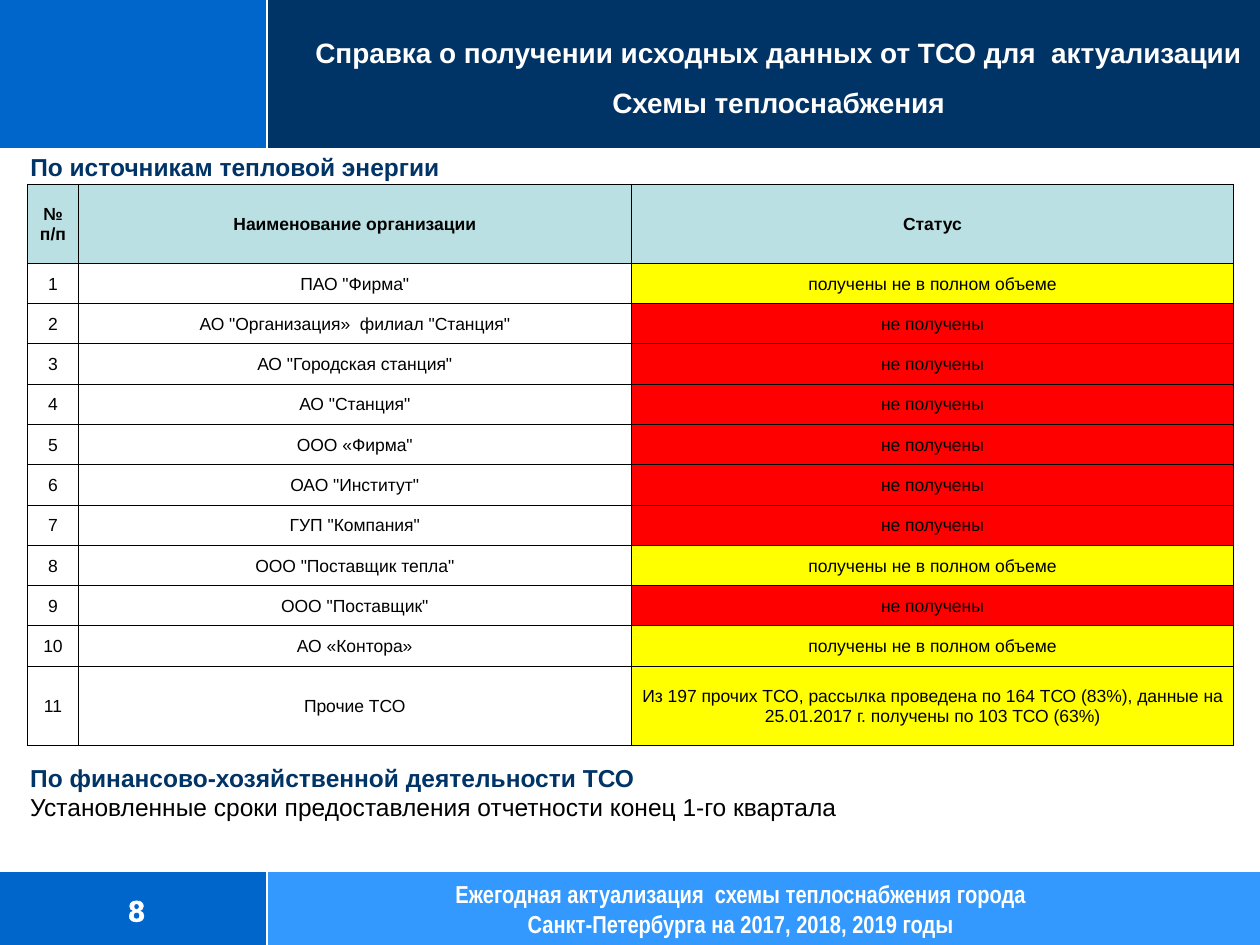
from dataclasses import dataclass

from lxml import etree
from pptx import Presentation
from pptx.dml.color import RGBColor
from pptx.enum.shapes import MSO_CONNECTOR, MSO_SHAPE
from pptx.enum.text import MSO_ANCHOR, PP_ALIGN
from pptx.oxml.ns import qn
from pptx.slide import Slide
from pptx.table import _Cell
from pptx.text.text import TextFrame, _Paragraph
from pptx.util import Inches, Pt

RECTANGLE = MSO_SHAPE.RECTANGLE
STRAIGHT = MSO_CONNECTOR.STRAIGHT
MIDDLE, TOP = MSO_ANCHOR.MIDDLE, MSO_ANCHOR.TOP
LEFT, CENTER = PP_ALIGN.LEFT, PP_ALIGN.CENTER

COLORS = {
    "white": "FFFFFF", "black": "000000", "navy": "003366",
    "blue": "0066CC", "sky": "3399FF", "header": "BBE0E3",
    "partial": "FFFF00", "missing": "FF0000",
}
WIDTH, HEIGHT = 10, 7.5
SIDEBAR = 2.12
HEADER_BOTTOM, FOOTER_TOP = 1.18, 6.91
FOOTER_HEIGHT = HEIGHT - FOOTER_TOP


@dataclass(frozen=True)
class TextLine:
    text: str
    size: float
    color: str
    bold: bool = True
    font: str = "Arial"
    align: PP_ALIGN = CENTER
    spacing: float = 1.0


@dataclass(frozen=True)
class TextBlock:
    box: tuple[float, float, float, float]
    lines: tuple[TextLine, ...]
    margins: tuple[float, float, float, float] = (0, 0, 0, 0)
    anchor: MSO_ANCHOR = MIDDLE


BANDS = (
    ((0, FOOTER_TOP, SIDEBAR, FOOTER_HEIGHT), "blue"),
    ((SIDEBAR, FOOTER_TOP, WIDTH - SIDEBAR, FOOTER_HEIGHT), "sky"),
    ((0, 0, SIDEBAR, HEADER_BOTTOM), "blue"),
    ((SIDEBAR, 0, WIDTH - SIDEBAR, HEADER_BOTTOM), "navy"),
)
DIVIDERS = (
    (SIDEBAR, FOOTER_TOP, SIDEBAR, HEIGHT),
    (SIDEBAR, 0, SIDEBAR, HEADER_BOTTOM),
    (0, FOOTER_TOP, WIDTH, FOOTER_TOP),
    (0, HEADER_BOTTOM, WIDTH, HEADER_BOTTOM),
)
BODY_MARGINS = (0.24, 0, 0.24, 0)
TEXT_BLOCKS = (
    TextBlock((2.36, 0, 7.64, 1.1), (
        TextLine("Справка о получении исходных данных от ТСО для  актуализации "
                 "Схемы теплоснабжения", 16, "white", spacing=1.5),)),
    TextBlock((0, 1.18, 4.92, 0.28), (
        TextLine("По источникам тепловой энергии", 14, "navy", align=LEFT),),
        BODY_MARGINS),
    TextBlock((0, 6.01, 10, 0.55), (
        TextLine("По финансово-хозяйственной деятельности ТСО", 14, "navy", align=LEFT),
        TextLine("Установленные сроки предоставления отчетности конец 1-го квартала",
                 14, "black", bold=False, align=LEFT)),
        BODY_MARGINS),
    TextBlock((3.38, 6.93, 5, 0.57), (
        TextLine("Ежегодная актуализация  схемы теплоснабжения города",
                 14, "white", font="Arial Narrow"),
        TextLine("Санкт-Петербурга на 2017, 2018, 2019 годы",
                 14, "white", font="Arial Narrow")),
        (0.1, 0.05, 0.1, 0.05), TOP),
)
PAGE_NUMBER = TextBlock((0.22, 6.96, 1.63, 0.52), (TextLine("8", 17, "white"),),
                        (0.1, 0, 0, 0))

HEADINGS = ("№ п/п", "Наименование организации", "Статус")
STATUS_TEXT = {"partial": "получены не в полном объеме", "missing": "не получены"}
ORGANIZATIONS = (
    ('ПАО "Фирма"', "partial"),
    ('АО "Организация»  филиал "Станция"', "missing"),
    ('АО "Городская станция"', "missing"),
    ('АО "Станция"', "missing"),
    ('ООО «Фирма"', "missing"),
    ('ОАО "Институт"', "missing"),
    ('ГУП "Компания"', "missing"),
    ('ООО "Поставщик тепла"', "partial"),
    ('ООО "Поставщик"', "missing"),
    ('АО «Контора»', "partial"),
)
OTHERS_STATUS = ("Из 197 прочих ТСО, рассылка проведена по 164 ТСО (83%), "
                 "данные на 25.01.2017 г. получены по 103 ТСО (63%)")
COLUMN_WIDTHS = (0.4, 4.39, 4.78)
TALL_ROW, ROW = 0.63, 0.32


def rgb(name: str) -> RGBColor:
    return RGBColor.from_string(COLORS[name])


def set_margins(target: TextFrame | _Cell, margins: tuple[float, ...]) -> None:
    """Set left, top, right and bottom margins in inches."""
    for side, margin in zip(("left", "top", "right", "bottom"), margins):
        setattr(target, f"margin_{side}", Inches(margin))


def write_line(paragraph: _Paragraph, line: TextLine) -> None:
    paragraph.alignment = line.align
    paragraph.line_spacing = line.spacing
    run = paragraph.add_run()
    run.text = line.text
    formats = {"name": line.font, "size": Pt(line.size), "bold": line.bold}
    for attribute, value in formats.items():
        setattr(run.font, attribute, value)
    run.font.color.rgb = rgb(line.color)


def add_band(slide: Slide, box: tuple[float, ...], color: str) -> None:
    band = slide.shapes.add_shape(RECTANGLE, *map(Inches, box))
    band.shadow.inherit = False
    band.fill.solid()
    band.fill.fore_color.rgb = rgb(color)
    band.line.fill.background()


def add_divider(slide: Slide, ends: tuple[float, ...]) -> None:
    divider = slide.shapes.add_connector(STRAIGHT, *map(Inches, ends))
    divider.line.color.rgb = rgb("white")
    divider.line.width = Pt(1.25)
    etree.SubElement(divider._element.spPr, qn("a:effectLst"))


def add_text(slide: Slide, block: TextBlock) -> TextFrame:
    frame = slide.shapes.add_textbox(*map(Inches, block.box)).text_frame
    frame.word_wrap = True
    frame.vertical_anchor = block.anchor
    set_margins(frame, block.margins)
    for index, line in enumerate(block.lines):
        write_line(frame.add_paragraph() if index else frame.paragraphs[0], line)
    return frame


def add_outline(parent: etree._Element, tag: str, color: str, width: float) -> etree._Element:
    """Append a solid line element, used for cell borders and glyph outlines."""
    outline = etree.SubElement(parent, qn(tag), w=str(Pt(width)))
    fill = etree.SubElement(outline, qn("a:solidFill"))
    etree.SubElement(fill, qn("a:srgbClr"), val=COLORS[color])
    return outline


def add_page_number(slide: Slide) -> None:
    run = add_text(slide, PAGE_NUMBER).paragraphs[0].runs[0]
    properties = run.font._element
    properties.insert(0, add_outline(properties, "a:ln", "white", 1.45))


def fill_cell(cell: _Cell, text: str, bold: bool, color: str | None) -> None:
    cell.vertical_anchor = MIDDLE
    set_margins(cell, (0.01, 0.01, 0.01, 0))
    write_line(cell.text_frame.paragraphs[0], TextLine(text, 10, "black", bold))
    for side in "LRTB":
        add_outline(cell._tc.get_or_add_tcPr(), f"a:ln{side}", "black", 0.5)
    if color:
        cell.fill.solid()
        cell.fill.fore_color.rgb = rgb(color)
    else:
        cell.fill.background()


def add_status_table(slide: Slide) -> None:
    entries = [(name, STATUS_TEXT[status], status) for name, status in ORGANIZATIONS]
    entries.append(("Прочие ТСО", OTHERS_STATUS, "partial"))
    heights = [TALL_ROW] + [ROW] * len(ORGANIZATIONS) + [TALL_ROW]
    table = slide.shapes.add_table(
        len(heights), len(HEADINGS), Inches(0.22), Inches(1.46),
        Inches(sum(COLUMN_WIDTHS)), Inches(sum(heights))).table
    table.first_row = table.horz_banding = False
    for column, width in zip(table.columns, COLUMN_WIDTHS):
        column.width = Inches(width)
    for row, height in zip(table.rows, heights):
        row.height = Inches(height)
    for column, heading in enumerate(HEADINGS):
        fill_cell(table.cell(0, column), heading, True, "header")
    for number, (name, status, color) in enumerate(entries, start=1):
        values = ((str(number), None), (name, None), (status, color))
        for column, (text, cell_color) in enumerate(values):
            fill_cell(table.cell(number, column), text, False, cell_color)


def main() -> None:
    presentation = Presentation()
    presentation.slide_width, presentation.slide_height = Inches(WIDTH), Inches(HEIGHT)
    slide = presentation.slides.add_slide(presentation.slide_layouts[6])
    for box, color in BANDS:
        add_band(slide, box, color)
    for ends in DIVIDERS:
        add_divider(slide, ends)
    for block in TEXT_BLOCKS:
        add_text(slide, block)
    add_page_number(slide)
    add_status_table(slide)
    presentation.save("out.pptx")


if __name__ == "__main__":
    main()
